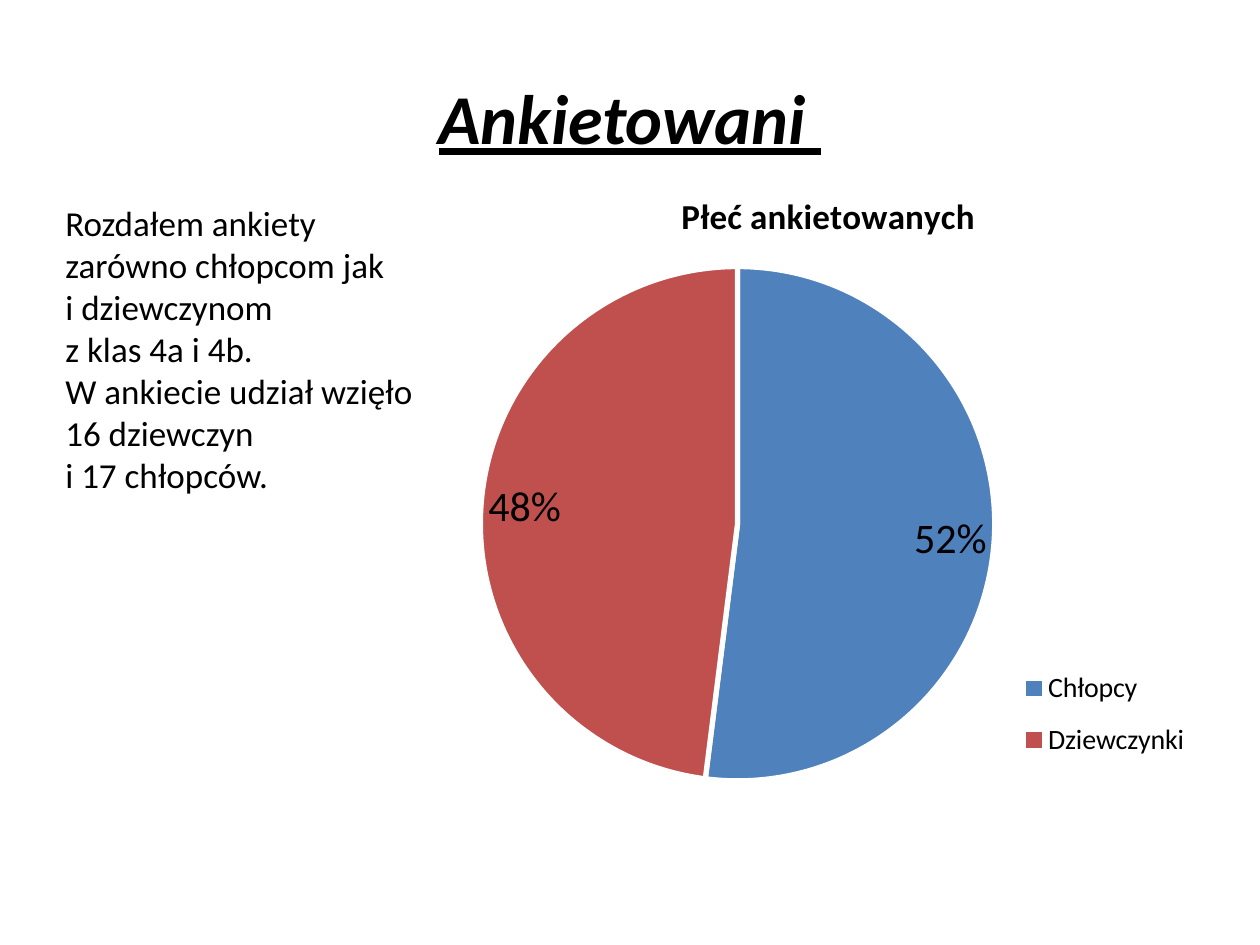
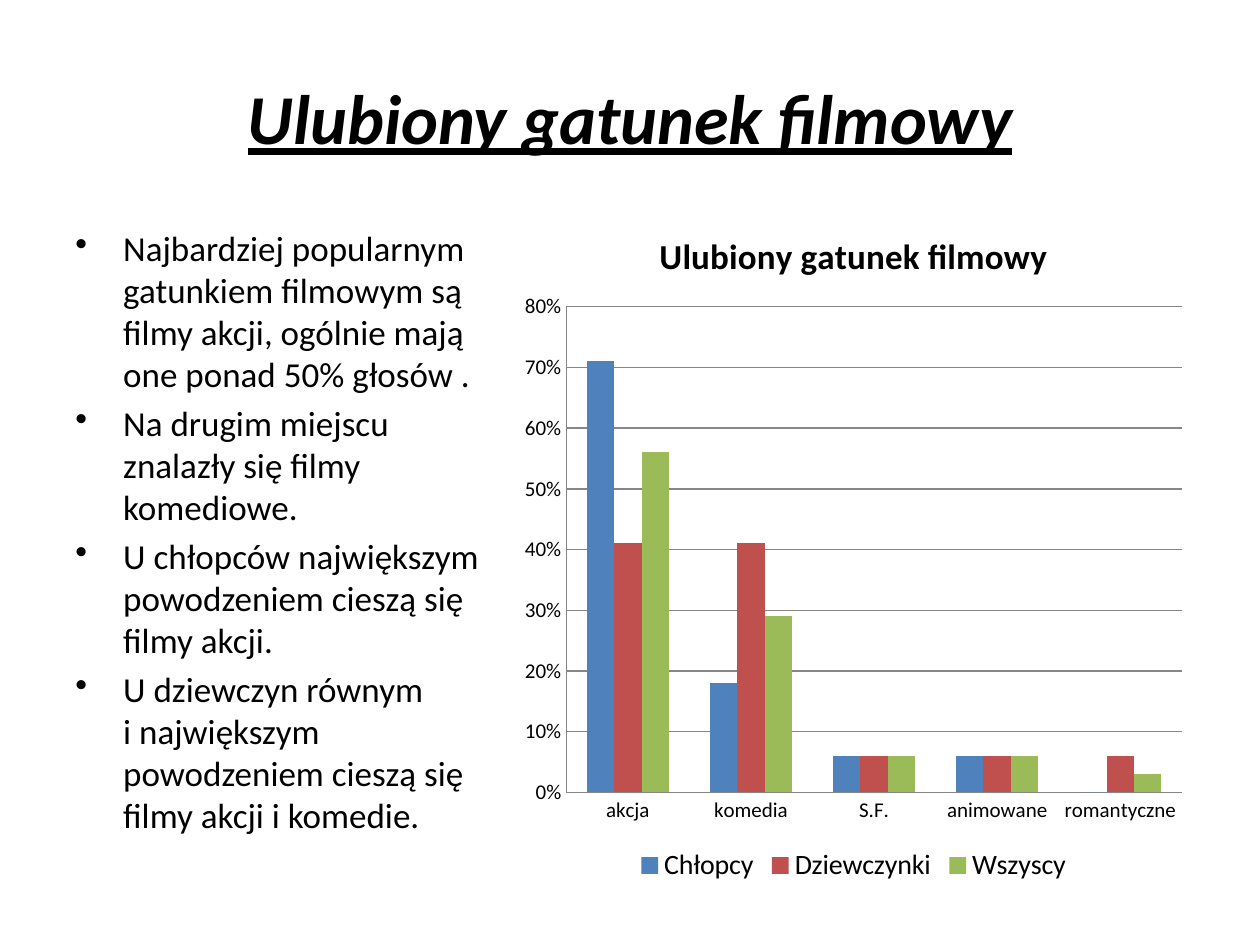
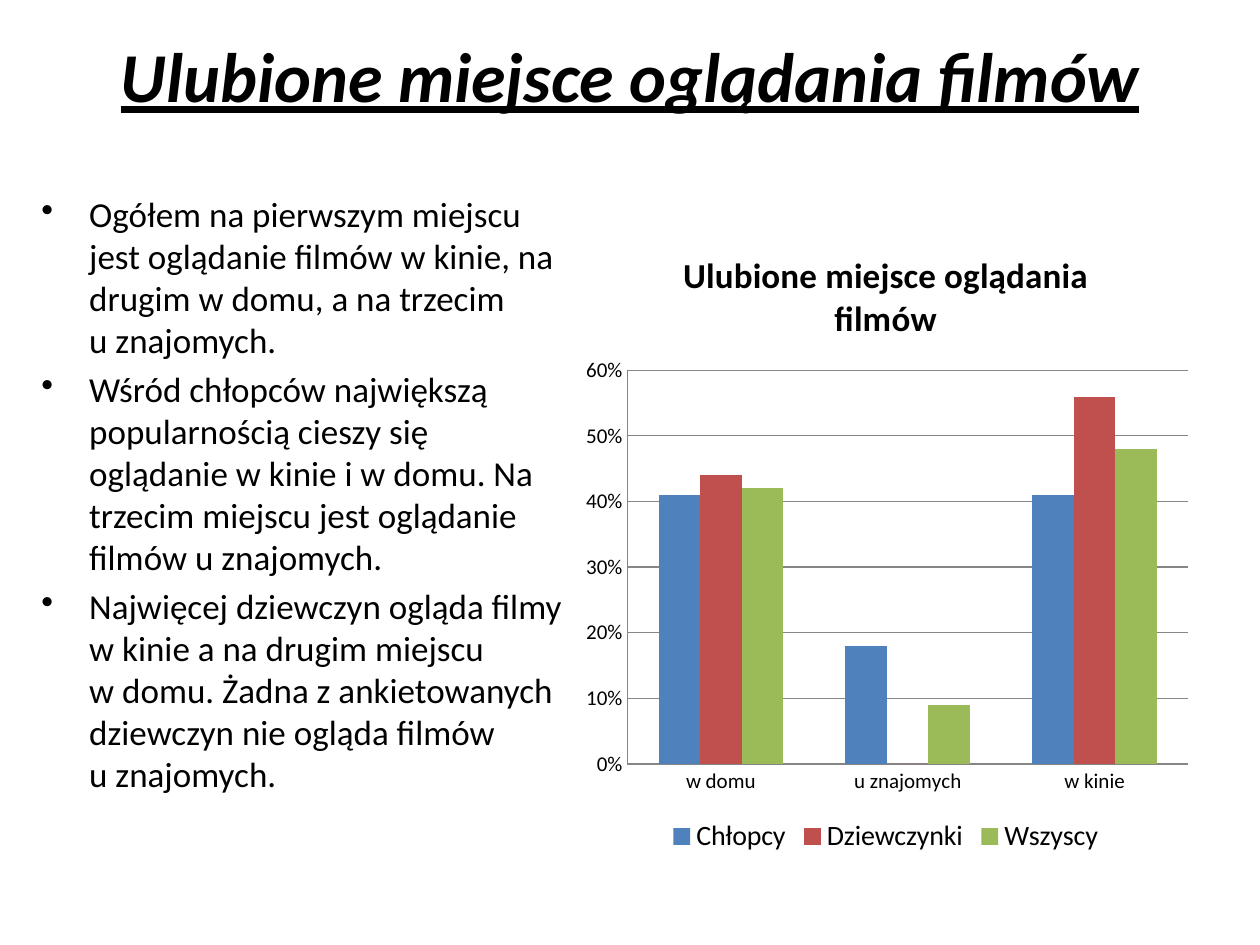
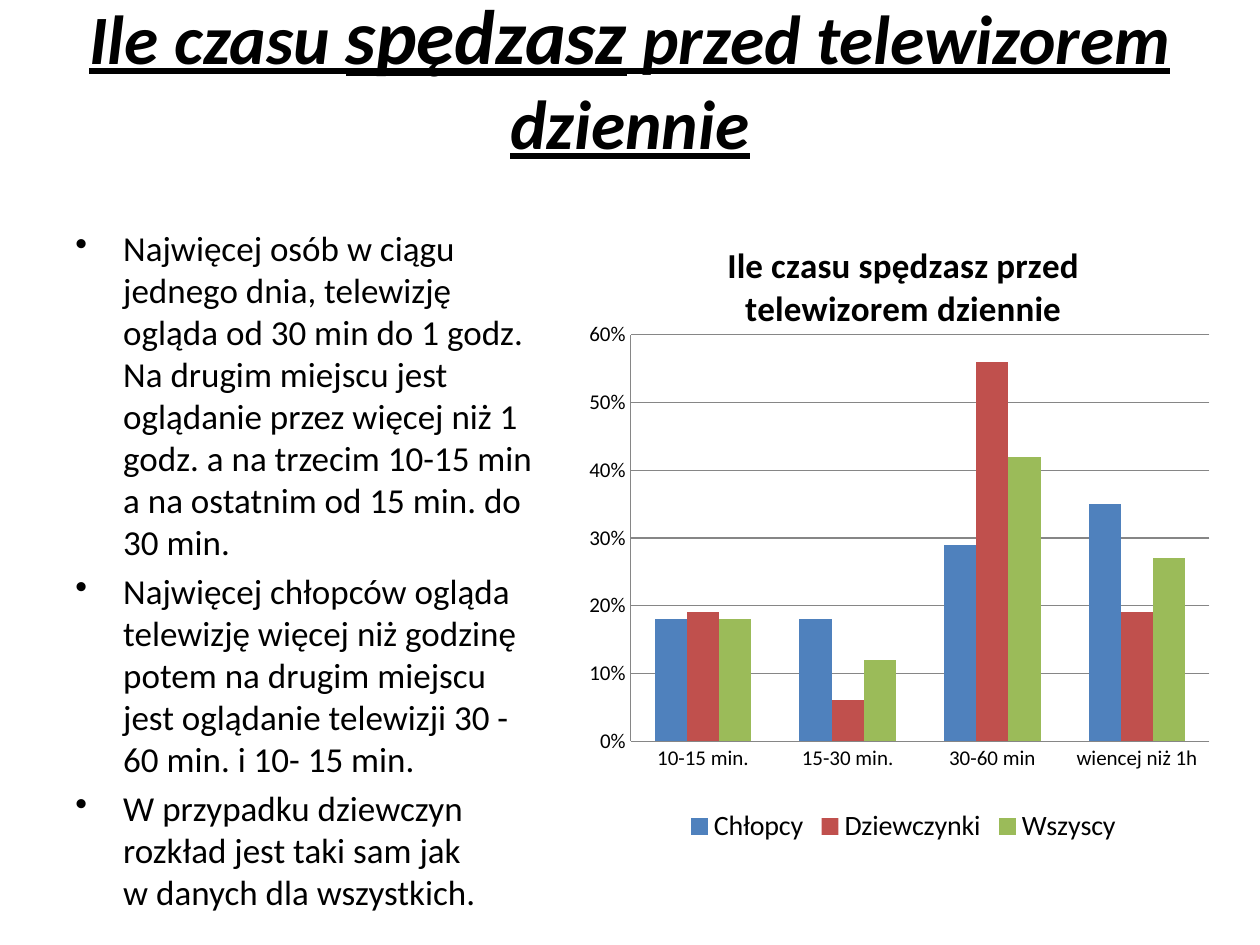
from lxml import etree
from pptx import Presentation
from pptx import util as u
from pptx.chart.data import CategoryChartData
from pptx.dml.color import RGBColor
from pptx.enum import chart as ch, text
from pptx.oxml import parse_xml
from pptx.oxml.ns import nsdecls, qn

BLACK, WHITE, GRID = "000000", "FFFFFF", "868686"
BLUE, RED, GREEN = "4F81BD", "C0504D", "9BBB59"


def color(hex_value):
    return RGBColor.from_string(hex_value)


def place(element, x, y, w, h, inner=False):
    """Fix the place of a plot area or legend, in fractions of the chart."""
    target = '<c:layoutTarget val="inner"/>' if inner else ""
    sizes = "".join(f'<c:{tag} val="{value}"/>'
                    for tag, value in zip("xywh", (x, y, w, h)))
    layout = parse_xml(
        f'<c:layout {nsdecls("c")}><c:manualLayout>{target}'
        '<c:xMode val="edge"/><c:yMode val="edge"/>'
        f'{sizes}</c:manualLayout></c:layout>')
    for old in element.findall(qn("c:layout")):
        element.remove(old)
    before = element.find(qn("c:legendPos"))
    if before is None:
        element.insert(0, layout)
    else:
        before.addnext(layout)


class Deck:
    """Holds the shared style and the current slide."""
    font = "Calibri"
    series_colors = (BLUE, RED, GREEN)

    def __init__(self):
        self.prs = Presentation()
        self.prs.slide_width, self.prs.slide_height = u.Inches(10), u.Inches(7.5)
        self.slide = None

    def new_slide(self):
        self.slide = self.prs.slides.add_slide(self.prs.slide_layouts[6])

    def style(self, font, size, **flags):
        font.name, font.size = self.font, u.Pt(size)
        font.color.rgb = color(BLACK)
        for flag, value in flags.items():
            setattr(font, flag, value)

    def frame(self, *box):
        frame = self.slide.shapes.add_textbox(*map(u.Inches, box)).text_frame
        frame.word_wrap = True
        return frame

    def title(self, *pieces, size=40, spare_line=False):
        """Add the heading; a piece is text or (text, own size)."""
        frame = self.frame(0.5, 0.3, 9, 1.25)
        frame.vertical_anchor = text.MSO_ANCHOR.MIDDLE
        heading = frame.paragraphs[0]
        heading.alignment = text.PP_ALIGN.CENTER
        self.style(heading.font, size, bold=True, italic=True, underline=True)
        for piece in pieces:
            run = heading.add_run()
            if isinstance(piece, tuple):
                run.text, run.font.size = piece[0], u.Pt(piece[1])
            else:
                run.text = piece
        if spare_line:
            heading.add_line_break()

    def body(self, box, paragraphs, bullets=True):
        frame = self.frame(*box)
        for i, words in enumerate(paragraphs):
            item = frame.add_paragraph() if i else frame.paragraphs[0]
            item.text = words
            self.style(item.font, 20)
            if bullets:
                item.space_before = u.Pt(4)
                props = item._p.get_or_add_pPr()
                props.set("marL", str(u.Inches(0.38)))
                props.set("indent", str(-u.Inches(0.38)))
                bullet = etree.Element(qn("a:buChar"), char="•")
                props.find(qn("a:defRPr")).addprevious(bullet)

    def chart(self, kind, box, heading, categories, series, plot, legend_pos):
        data = CategoryChartData(number_format="0%")
        data.categories = categories
        for name, values in series.items():
            data.add_series(name, values)
        chart = self.slide.shapes.add_chart(
            kind, *map(u.Inches, box), data).chart
        self.style(chart.font, 10)
        chart.has_title = True
        caption = chart.chart_title.text_frame
        caption.text = heading
        self.style(caption.paragraphs[0].font, 20, bold=True)
        chart.has_legend = True
        chart.legend.position = legend_pos
        chart.legend.include_in_layout = False
        self.style(chart.legend.font, 16)
        place(chart._chartSpace.chart.plotArea, *plot, inner=True)
        return chart

    def pie(self, box, heading, shares, plot, legend_box):
        chart = self.chart(ch.XL_CHART_TYPE.PIE, box, heading, list(shares),
                           {heading: list(shares.values())}, plot,
                           ch.XL_LEGEND_POSITION.RIGHT)
        place(chart.legend._element, *legend_box)
        pie = chart.plots[0]
        for i, fill in zip(range(len(shares)), self.series_colors):
            wedge = pie.series[0].points[i].format
            wedge.fill.solid()
            wedge.fill.fore_color.rgb = color(fill)
            wedge.line.color.rgb = color(WHITE)
            wedge.line.width = u.Pt(3)
        pie.has_data_labels = True
        labels = pie.data_labels
        labels.show_percentage, labels.show_value = True, False
        labels.number_format, labels.number_format_is_linked = "0%", False
        labels.position = ch.XL_LABEL_POSITION.INSIDE_END
        self.style(labels.font, 24)

    def columns(self, box, heading, categories, boys, girls, everyone, top, plot):
        series = {"Chłopcy": boys, "Dziewczynki": girls, "Wszyscy": everyone}
        chart = self.chart(ch.XL_CHART_TYPE.COLUMN_CLUSTERED, box, heading,
                           categories, series, plot,
                           ch.XL_LEGEND_POSITION.BOTTOM)
        bars = chart.plots[0]
        bars.gap_width, bars.overlap, bars.vary_by_categories = 150, 0, False
        for group, fill in zip(bars.series, self.series_colors):
            group.format.fill.solid()
            group.format.fill.fore_color.rgb = color(fill)
        # Axes and grid
        scale = chart.value_axis
        scale.minimum_scale, scale.maximum_scale, scale.major_unit = 0, top, 0.1
        scale.has_major_gridlines = True
        scale.tick_labels.number_format = "0%"
        scale.tick_labels.number_format_is_linked = False
        for axis in (chart.category_axis, scale):
            axis.major_tick_mark = ch.XL_TICK_MARK.NONE
            self.style(axis.tick_labels.font, 12)
        for rule in (chart.category_axis, scale, scale.major_gridlines):
            rule.format.line.color.rgb = color(GRID)
            rule.format.line.width = u.Pt(0.75)


def main():
    deck = Deck()

    # Respondents
    deck.new_slide()
    deck.title("Ankietowani ")
    deck.pie((3.57, 1.31, 6.01, 5.04), "Płeć ankietowanych",
             {"Chłopcy": 52, "Dziewczynki": 48},
             plot=(0.04, 0.16, 0.68, 0.81), legend_box=(0.75, 0.77, 0.23, 0.19))
    deck.body((0.42, 1.55, 3.15, 2.46), [
        "Rozdałem ankiety zarówno chłopcom jak",
        "i dziewczynom",
        "z klas 4a i 4b.",
        "W ankiecie udział wzięło 16 dziewczyn\vi 17 chłopców.",
    ], bullets=False)

    # Favourite genre
    deck.new_slide()
    genre = "Ulubiony gatunek filmowy"
    deck.title(genre)
    deck.body((0.5, 1.75, 3.56, 4.95), [
        "Najbardziej popularnym gatunkiem filmowym są filmy akcji, "
        "ogólnie mają one ponad 50% głosów .",
        "Na drugim miejscu znalazły się filmy komediowe.",
        "U chłopców największym powodzeniem cieszą się filmy akcji.",
        "U dziewczyn równym\vi największym powodzeniem cieszą się "
        "filmy akcji i komedie.",
    ])
    deck.columns((4.06, 1.62, 5.43, 5.43), genre,
                 ["akcja", "komedia", "S.F.", "animowane", "romantyczne"],
                 boys=[0.71, 0.18, 0.06, 0.06, 0],
                 girls=[0.41, 0.41, 0.06, 0.06, 0.06],
                 everyone=[0.56, 0.29, 0.06, 0.06, 0.03],
                 top=0.8, plot=(0.08, 0.15, 0.9, 0.71))

    # Favourite place
    deck.new_slide()
    venue = "Ulubione miejsce oglądania filmów"
    deck.title(venue, spare_line=True)
    deck.body((0.23, 1.48, 4.33, 5.59), [
        "Ogółem na pierwszym miejscu jest oglądanie filmów w kinie, "
        "na drugim w domu, a na trzecim\vu znajomych.",
        "Wśród chłopców największą popularnością cieszy się oglądanie "
        "w kinie i w domu. Na trzecim miejscu jest oglądanie filmów "
        "u znajomych.",
        "Najwięcej dziewczyn ogląda filmy w kinie a na drugim miejscu\v"
        "w domu. Żadna z ankietowanych dziewczyn nie ogląda filmów\v"
        "u znajomych.",
    ])
    deck.columns((4.53, 1.78, 5, 5.04), venue,
                 ["w domu", "u znajomych", "w kinie"],
                 boys=[0.41, 0.18, 0.41],
                 girls=[0.44, 0, 0.56],
                 everyone=[0.42, 0.09, 0.48],
                 top=0.6, plot=(0.09, 0.23, 0.89, 0.62))

    # Daily viewing time
    deck.new_slide()
    deck.title("Ile czasu ", ("spędzasz", 44.1), " przed telewizorem dziennie",
               size=39.6, spare_line=True)
    deck.body((0.5, 1.75, 3.87, 5.46), [
        "Najwięcej osób w ciągu jednego dnia, telewizję ogląda od 30 min "
        "do 1 godz. Na drugim miejscu jest oglądanie przez więcej niż "
        "1 godz. a na trzecim 10-15 min a na ostatnim od 15 min. do 30 min.",
        "Najwięcej chłopców ogląda telewizję więcej niż godzinę potem "
        "na drugim miejscu jest oglądanie telewizji 30 - 60 min. "
        "i 10- 15 min.",
        "W przypadku dziewczyn rozkład jest taki sam jak\v"
        "w danych dla wszystkich.",
    ])
    deck.columns((4.53, 1.7, 5.28, 5.04),
                 "Ile czasu spędzasz przed telewizorem dziennie",
                 ["10-15 min.", "15-30 min.", "30-60 min", "wiencej niż 1h"],
                 boys=[0.18, 0.18, 0.29, 0.35],
                 girls=[0.19, 0.06, 0.56, 0.19],
                 everyone=[0.18, 0.12, 0.42, 0.27],
                 top=0.6, plot=(0.09, 0.19, 0.87, 0.64))

    deck.prs.save("out.pptx")


if __name__ == "__main__":
    main()
